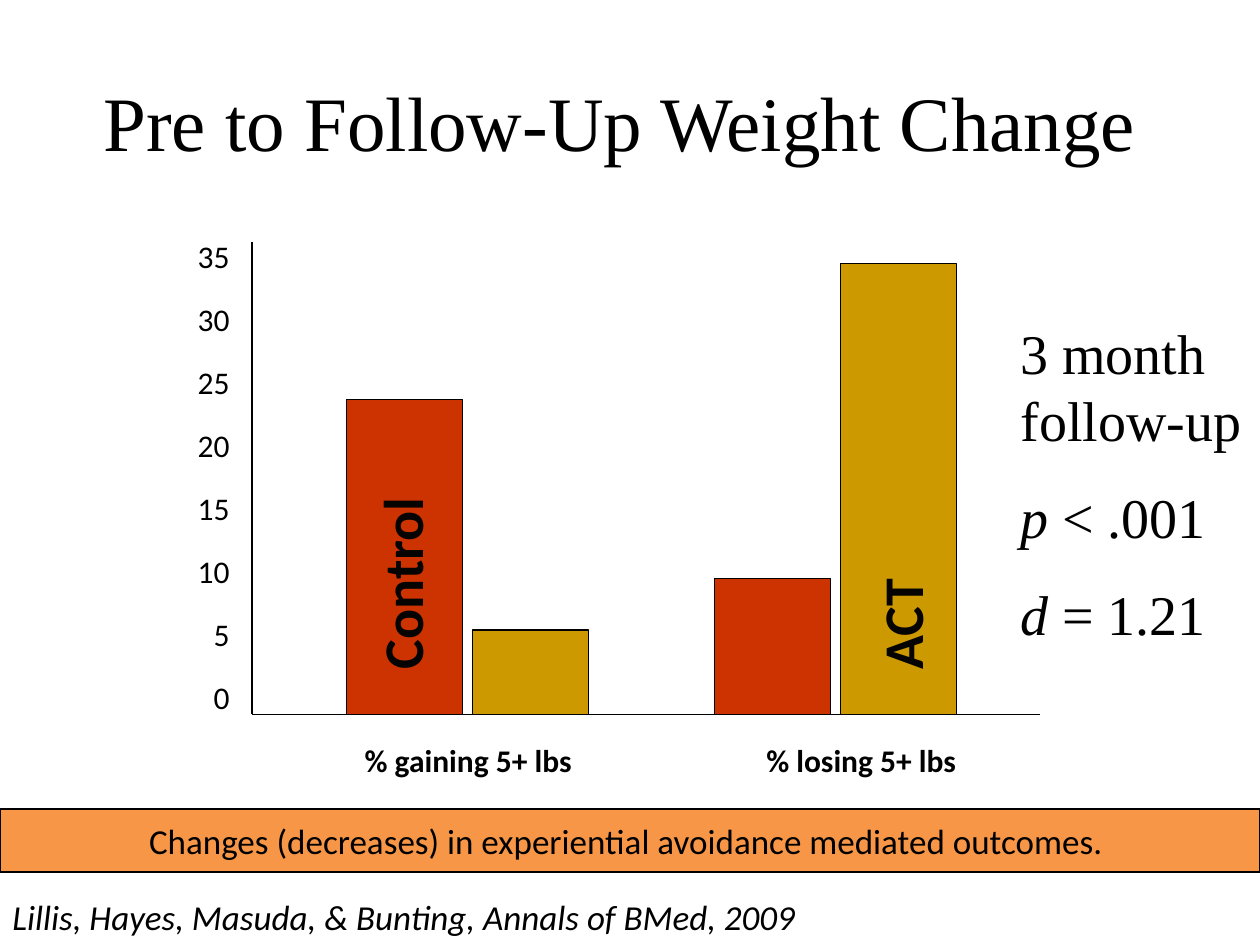
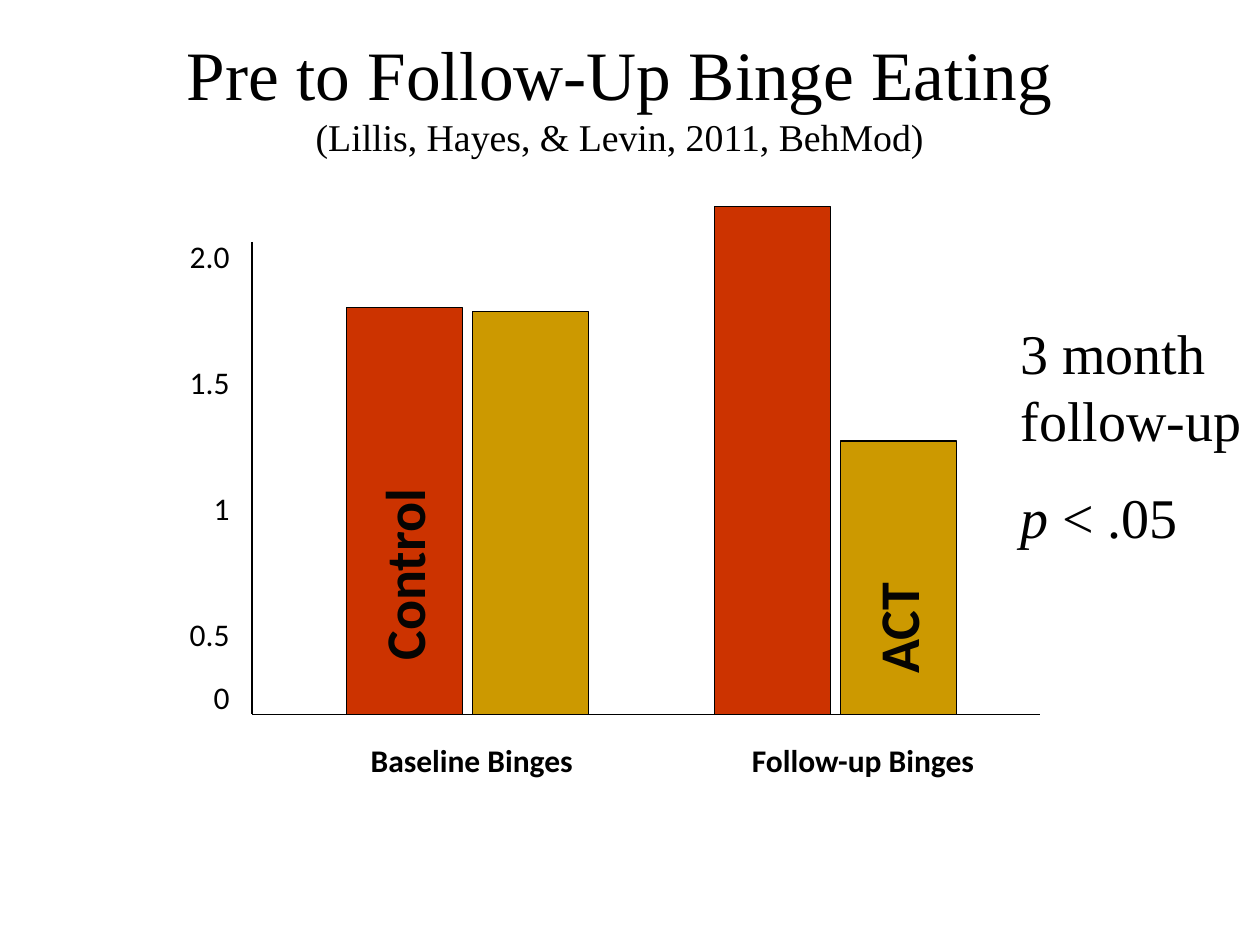
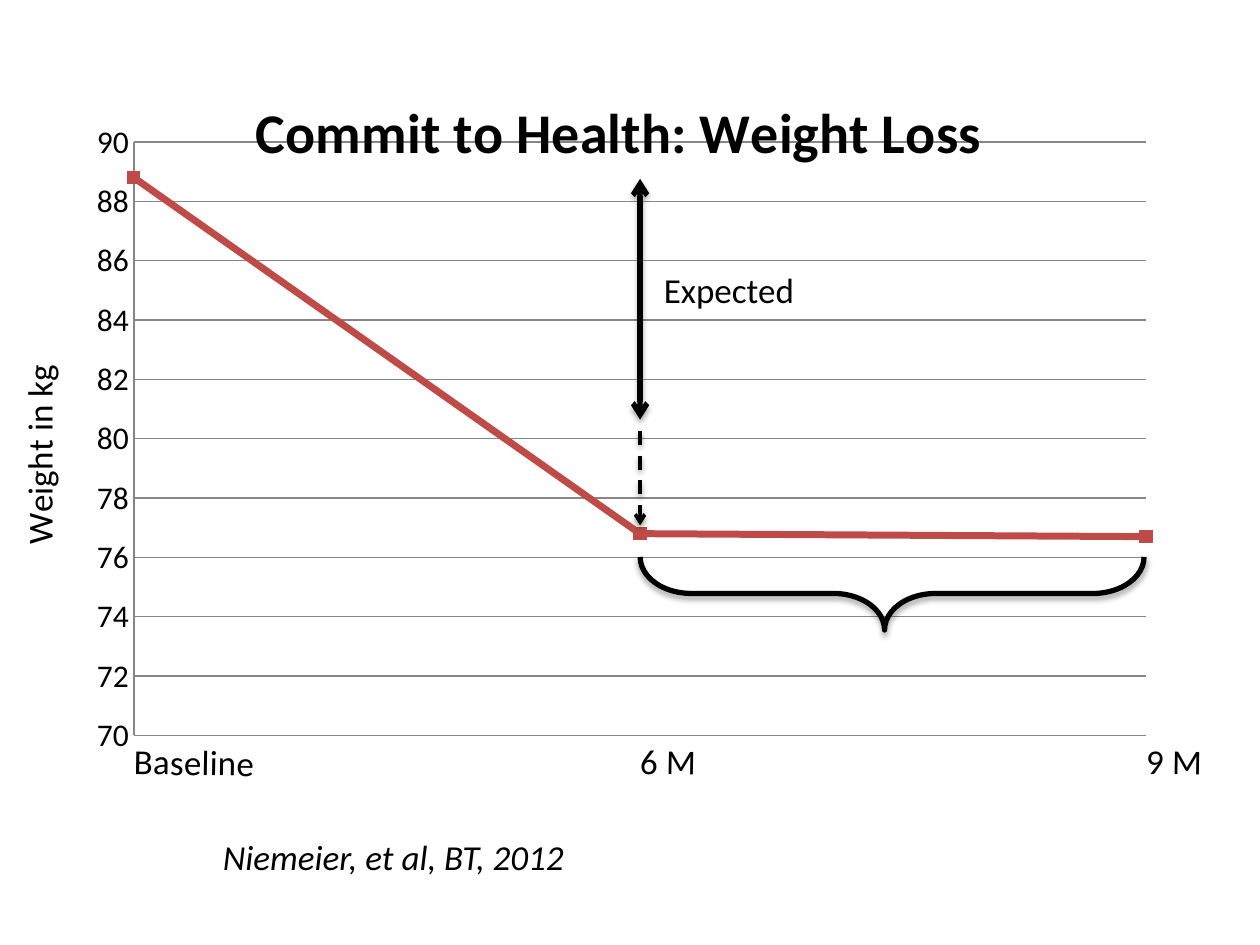
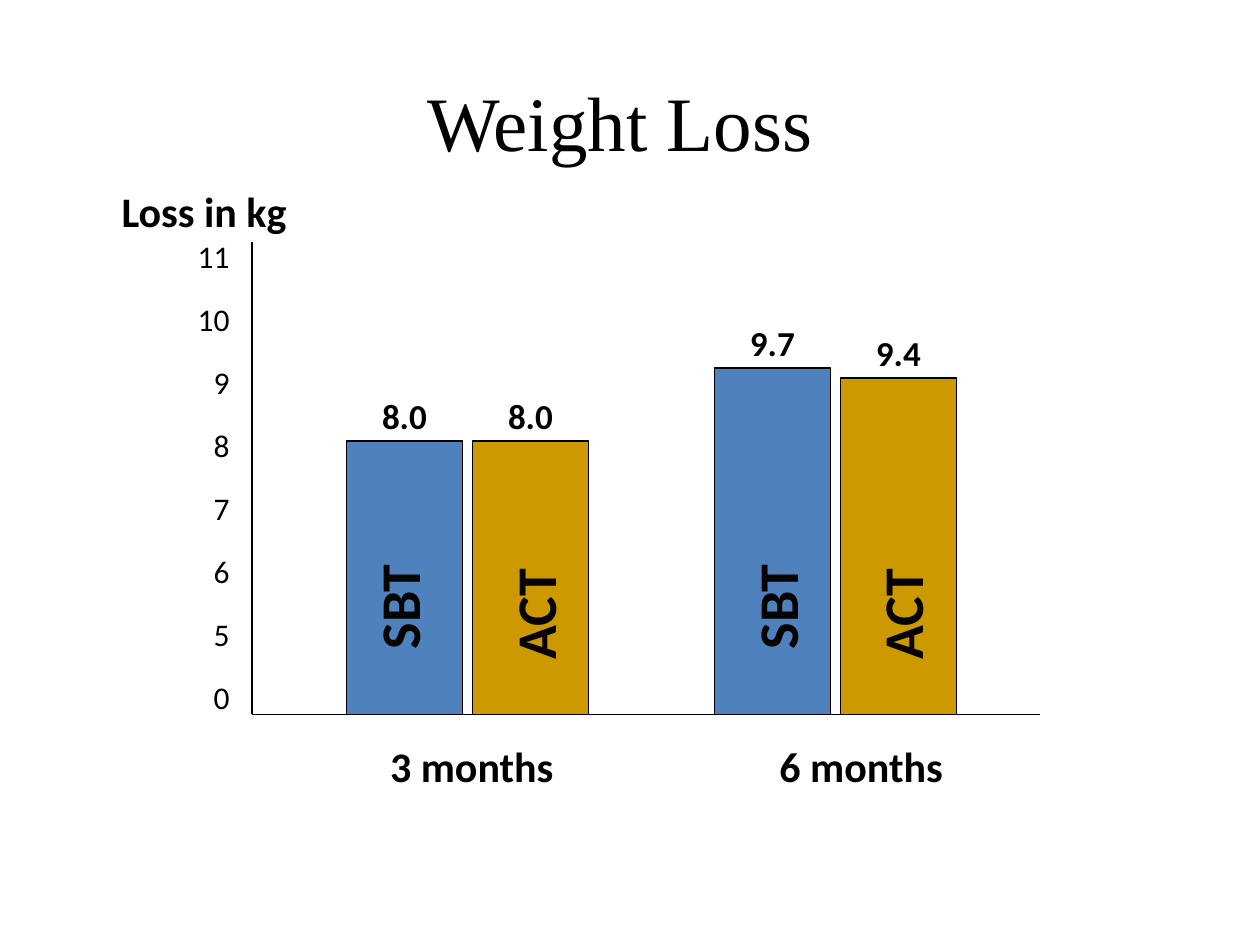
from lxml.etree import SubElement
from pptx import Presentation
from pptx.chart.data import CategoryChartData
from pptx.dml.color import RGBColor
from pptx.enum.chart import XL_CHART_TYPE as Chart, XL_MARKER_STYLE as Marker, XL_TICK_MARK as Tick
from pptx.enum.dml import MSO_LINE_DASH_STYLE as Dash
from pptx.enum.shapes import MSO_CONNECTOR_TYPE as Link, MSO_SHAPE as Preset
from pptx.enum.text import MSO_ANCHOR as Anchor, MSO_AUTO_SIZE as Fit, PP_ALIGN as Align
from pptx.oxml import parse_xml
from pptx.oxml.ns import nsdecls, qn
from pptx.util import Inches, Pt

COLORS = {
    "ink": "000000", "label": "060402", "control": "CC3300", "act": "CC9900",
    "sbt": "4F81BD", "band": "F79646", "series": "BE4B48", "grid": "868686",
}
SANS, SERIF = "Calibri", "Times New Roman"
BASELINE, AXIS_LEFT, AXIS_TOP, AXIS_RIGHT = 5.67, 2, 1.92, 8.25
BAR_WIDTH, BAR_LEFTS = 0.92, (2.75, 3.75, 5.67, 6.67)
TICK_TOP, TICK_STEP = 1.83, 0.5

BAR_SLIDES = [
    {
        "title": [("Pre to Follow-Up Weight Change", 44)],
        "title_at": (0.42, 0.33, 9, 1.25),
        "ticks": dict(enumerate(["35", "30", "25", "20", "15", "10", "5", "0"])),
        "bars": [("control", 2.5), ("act", 0.67), ("control", 1.08), ("act", 3.58)],
        "captions": [("% gaining 5+ lbs ", 2.33, 2.83), ("% losing 5+ lbs", 5.5, 2.67)],
        "caption_size": 18,
        "bar_names": [("Control", 2.02, 3.93, 2.33), ("ACT", 6.4, 4.35, 1.5)],
        "stats": [[("3 month follow-up", False)],
                  [("p", True), (" < .001", False)],
                  [("d ", True), ("= 1.21", False)]],
        "stats_height": 4.97,
        "citation": "Lillis, Hayes, Masuda, & Bunting, Annals of BMed, 2009",
        "band": "Changes (decreases) in experiential avoidance mediated outcomes. ",
    },
    {
        "title": [("Pre to Follow-Up Binge Eating", 39.6),
                  ("(Lillis, Hayes, & Levin, 2011, BehMod)", 21.6)],
        "title_at": (0.42, 0.17, 9, 1.17),
        "ticks": {0: "2.0", 2: "1.5", 4: "1", 6: "0.5", 7: "0"},
        "bars": [("control", 3.23), ("act", 3.2), ("control", 4.03), ("act", 2.17)],
        "captions": [("Baseline Binges", 2.33, 2.83), ("Follow-up Binges", 5.32, 3.06)],
        "caption_size": 18,
        "bar_names": [("Control", 2.03, 3.86, 2.33), ("ACT", 6.37, 4.38, 1.5)],
        "stats": [[("3 month follow-up", False)],
                  [("p", True), (" < .05", False)]],
        "stats_height": 4.21,
    },
    {
        "title": [("Weight Loss", 44)],
        "title_at": (0.42, 0.33, 9, 1.25),
        "ticks": dict(enumerate(["11", "10", "9", "8", "7", "6", "5", "0"])),
        "bars": [("sbt", 2.17), ("act", 2.17), ("sbt", 2.75), ("act", 2.67)],
        "bar_values": ["8.0", "8.0", "9.7", "9.4"],
        "captions": [("3 months", 2.33, 2.83), ("6 months", 5.5, 2.67)],
        "caption_size": 24,
        "bar_names": [("SBT", 2.32, 4.1, 1.67), ("ACT", 3.53, 4.31, 1.42),
                      ("SBT", 5.32, 4.1, 1.67), ("ACT", 6.44, 4.31, 1.42)],
        "axis_name": "Loss in kg",
    },
]
LINE_SLIDE = {
    "title": "Commit to Health: Weight Loss",
    "axis_name": "Weight in kg",
    "categories": ["Baseline", "6 M", "9 M"],
    "values": [88.8, 76.8, 76.7],
    "citation": "Niemeier, et al, BT, 2012",
    "note": "Expected",
}


def rgb(name):
    return RGBColor.from_string(COLORS[name])


def inches(*lengths):
    return [Inches(length) for length in lengths]


def style_font(font, size, face=SANS, color="ink", **extra):
    for name, value in {"size": Pt(size), "name": face, **extra}.items():
        setattr(font, name, value)
    font.color.rgb = rgb(color)


def add_span(para, text, size, **style):
    span = para.add_run()
    span.text = text
    style_font(span.font, size, **style)


def add_text(page, text, at, size, align=Align.LEFT, **style):
    box = page.shapes.add_textbox(*inches(*at))
    box.text_frame.word_wrap = True
    para = box.text_frame.paragraphs[0]
    para.alignment = align
    add_span(para, text, size, **style)
    return box


def set_effect(shape, alpha=None):
    effects = SubElement(shape._element.spPr, qn("a:effectLst"))
    if alpha:
        shadow = SubElement(effects, qn("a:outerShdw"), blurRad="40000", dist="23000",
                            dir="5400000", rotWithShape="0")
        color = SubElement(shadow, qn("a:srgbClr"), val=COLORS["ink"])
        SubElement(color, qn("a:alpha"), val=str(alpha * 1000))


def add_line(page, start, end, width=0.75, dash=None, ends=(), alpha=None):
    link = page.shapes.add_connector(Link.STRAIGHT, *inches(*start, *end))
    link.line.color.rgb = rgb("ink")
    link.line.width = Pt(width)
    if dash:
        link.line.dash_style = dash
    for tag in ends:
        SubElement(link._element.spPr.find(qn("a:ln")), qn(tag), type="arrow")
    set_effect(link, alpha)


def add_block(page, at, color, width=0.75):
    block = page.shapes.add_shape(Preset.RECTANGLE, *inches(*at))
    block.shadow.inherit = False
    block.fill.solid()
    block.fill.fore_color.rgb = rgb(color)
    block.line.color.rgb = rgb("ink")
    block.line.width = Pt(width)
    return block


def add_title(page, lines, at):
    title = page.shapes.title
    for name, value in zip(("left", "top", "width", "height"), inches(*at)):
        setattr(title, name, value)
    title.text_frame.auto_size = Fit.NONE
    title.text_frame.vertical_anchor = Anchor.MIDDLE
    para = title.text_frame.paragraphs[0]
    para.alignment = Align.CENTER
    for index, (text, size) in enumerate(lines):
        if index:
            para.add_line_break()
        add_span(para, text, size, face=SERIF)


def add_stats(page, rows, height):
    box = page.shapes.add_textbox(*inches(8, 1.67, 2, height))
    frame = box.text_frame
    frame.word_wrap = True
    frame.margin_top = Inches(0.86)
    for index, row in enumerate(rows):
        para = frame.add_paragraph() if index else frame.paragraphs[0]
        para.space_before = Pt(17 if index else 0)
        for text, italic in row:
            add_span(para, text, 32, face=SERIF, italic=italic)


def add_band(page, text):
    band = add_block(page, (0, 6.42, 10, 0.5), "band", 1)
    band.text_frame.word_wrap = False
    band.text_frame.vertical_anchor = Anchor.MIDDLE
    para = band.text_frame.paragraphs[0]
    para.alignment = Align.CENTER
    add_span(para, text, 20)


def add_bar_slide(deck, content):
    page = deck.slides.add_slide(deck.slide_layouts[5])
    add_title(page, content["title"], content["title_at"])
    corner = (AXIS_LEFT, BASELINE)
    add_line(page, (AXIS_LEFT, AXIS_TOP), corner)
    add_line(page, corner, (AXIS_RIGHT, BASELINE))
    for row, label in content["ticks"].items():
        width = 0.72 if "." in label else 0.58
        at = (AXIS_TOP - width, TICK_TOP + row * TICK_STEP, width, 0.5)
        add_text(page, label, at, 18, Align.RIGHT)
    for text, left, width in content["captions"]:
        add_text(page, text, (left, 5.83, width, 0.5), content["caption_size"],
                 Align.CENTER, bold=True)
    for left, (color, height) in zip(BAR_LEFTS, content["bars"]):
        add_block(page, (left, BASELINE - height, BAR_WIDTH, height), color)
    for left, (_, height), value in zip(BAR_LEFTS, content["bars"], content.get("bar_values", [])):
        add_text(page, value, (left, BASELINE - height - 0.42, BAR_WIDTH, 0.44), 20,
                 Align.CENTER, bold=True)
    for text, left, top, width in content["bar_names"]:
        name = add_text(page, text, (left, top, width, 0.63), 32, color="label", bold=True)
        name.rotation = 270
    if "axis_name" in content:
        add_text(page, content["axis_name"], (0.83, 1.42, 1.58, 0.5), 24, Align.CENTER, bold=True)
    if "stats" in content:
        add_stats(page, content["stats"], content["stats_height"])
    if "citation" in content:
        add_text(page, content["citation"], (0, 7.06, 6.75, 0.44), 20, italic=True)
    if "band" in content:
        add_band(page, content["band"])


def chart_part(tag, value):
    return parse_xml(f'<c:{tag} {nsdecls("c")} val="{value}"/>')


def layout_part(**places):
    inner = "".join(f'<c:{name} val="{value}"/>' for name, value in places.items())
    return parse_xml(f'<c:layout {nsdecls("c")}><c:manualLayout>{inner}</c:manualLayout></c:layout>')


def drop_parts(parent, *tags):
    for tag in tags:
        for old in parent.findall(qn(tag)):
            parent.remove(old)


def place_chart_parts(chart):
    plot_area = chart._chartSpace.chart.plotArea
    drop_parts(plot_area, "c:layout")
    plot_area.insert(0, layout_part(layoutTarget="inner", xMode="edge", yMode="edge",
                                    x=0.109, y=0.118, w=0.824, h=0.785))
    title = chart.chart_title._element
    drop_parts(title, "c:layout", "c:overlay")
    title_layout = layout_part(xMode="edge", yMode="edge", x=0.2, y=0.04)
    title.find(qn("c:tx")).addnext(title_layout)
    title_layout.addnext(chart_part("overlay", 1))
    value_axis = plot_area.find(qn("c:valAx"))
    drop_parts(value_axis, "c:crossBetween")
    value_axis.find(qn("c:crosses")).addnext(chart_part("crossBetween", "midCat"))
    labels = plot_area.find(qn("c:catAx")).find(qn("c:txPr"))
    labels.find(qn("a:bodyPr")).set("rot", "60000")


def add_weight_chart(page, content):
    data = CategoryChartData()
    data.categories = content["categories"]
    data.add_series("Series 1", content["values"])
    at = inches(0, 0.42, 9.75, 6)
    chart = page.shapes.add_chart(Chart.LINE_MARKERS, *at, data).chart
    style_font(chart.font, 18)
    chart.has_legend = False
    chart.has_title = True
    value_axis, category_axis = chart.value_axis, chart.category_axis
    value_axis.has_title = True
    headings = [(chart.chart_title, content["title"], 32, True),
                (value_axis.axis_title, content["axis_name"], 20, False)]
    for heading, text, size, bold in headings:
        add_span(heading.text_frame.paragraphs[0], text, size, bold=bold)
    scale = {"minimum_scale": 70, "maximum_scale": 90, "major_unit": 2, "has_major_gridlines": True}
    for name, value in scale.items():
        setattr(value_axis, name, value)
    for axis, size in ((value_axis, 18), (category_axis, 20)):
        axis.major_tick_mark = axis.minor_tick_mark = Tick.NONE
        style_font(axis.tick_labels.font, size)
    for part in (value_axis, category_axis, value_axis.major_gridlines):
        part.format.line.color.rgb = rgb("grid")
        part.format.line.width = Pt(0.75)
    chart.plots[0].vary_by_categories = False
    series = chart.plots[0].series[0]
    series.smooth = False
    series.format.line.color.rgb = rgb("series")
    series.format.line.width = Pt(4)
    series.marker.style, series.marker.size = Marker.SQUARE, 7
    series.marker.format.fill.solid()
    series.marker.format.fill.fore_color.rgb = rgb("series")
    series.marker.format.line.color.rgb = rgb("series")
    place_chart_parts(chart)


def add_line_slide(deck, content):
    page = deck.slides.add_slide(deck.slide_layouts[6])
    add_weight_chart(page, content)
    add_text(page, content["citation"], (1.67, 6.58, 7.17, 0.44), 20, italic=True)
    brace = page.shapes.add_shape(Preset.RIGHT_BRACE, *inches(6.79, 2.71, 0.58, 4))
    brace.rotation = 90
    brace.adjustments[0], brace.adjustments[1] = 0.7, 0.515
    brace.fill.background()
    brace.line.color.rgb = rgb("ink")
    brace.line.width = Pt(3)
    set_effect(brace, 35)
    add_line(page, (5.08, 1.42), (5.08, 3.33), 3, ends=("a:headEnd", "a:tailEnd"), alpha=35)
    add_line(page, (5.08, 3.42), (5.08, 4.17), 2, Dash.DASH, ("a:tailEnd",), 38)
    add_text(page, content["note"], (5.17, 2.08, 1.58, 0.44), 20)


def main():
    deck = Presentation()
    deck.slide_width, deck.slide_height = inches(10, 7.5)
    weight_change, binge_eating, weight_loss = BAR_SLIDES
    add_bar_slide(deck, weight_change)
    add_bar_slide(deck, binge_eating)
    add_line_slide(deck, LINE_SLIDE)
    add_bar_slide(deck, weight_loss)
    deck.save("out.pptx")


if __name__ == "__main__":
    main()
